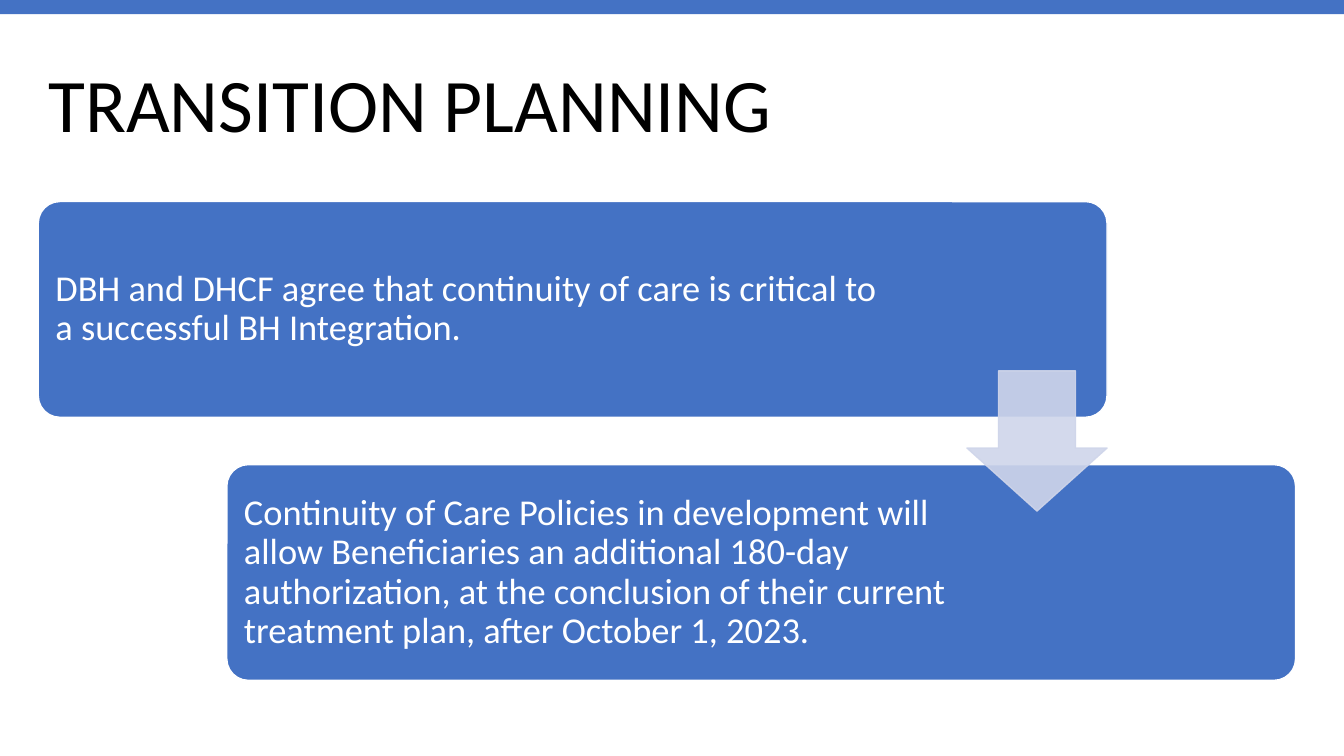
from dataclasses import dataclass

from lxml.etree import SubElement
from pptx import Presentation
from pptx.dml.color import RGBColor
from pptx.enum.shapes import MSO_SHAPE as Shape
from pptx.enum.text import MSO_ANCHOR as Anchor, PP_ALIGN as Align
from pptx.oxml.ns import qn
from pptx.util import Inches, Pt


@dataclass(frozen=True)
class Theme:
    font: str = "Calibri"
    title_size: int = 54
    body_size: int = 26
    blue: str = "4472C4"
    pale: str = "CFD5EA"
    white: str = "FFFFFF"
    black: str = "000000"


@dataclass(frozen=True)
class Box:
    left: float
    top: float
    width: float
    height: float

    @property
    def right(self):
        return self.left + self.width

    @property
    def bottom(self):
        return self.top + self.height

    def lengths(self):
        return [Inches(value) for value in (self.left, self.top, self.width, self.height)]


THEME = Theme()
SLIDE = Box(0, 0, 13.33, 7.5)
STEPS = [
    ("DBH and DHCF agree that continuity of care is critical to a successful BH Integration.", 8.39),
    ("Continuity of Care Policies in development will allow Beneficiaries an additional 180-day "
     "authorization, at the conclusion of their current treatment plan, after October 1, 2023.", 7.22),
]


def add_filled_shape(slide, kind, box, fill, line=None, adjustments=()):
    shape = slide.shapes.add_shape(kind, *box.lengths())
    shape.shadow.inherit = False
    for index, value in enumerate(adjustments):
        shape.adjustments[index] = value
    shape.fill.solid()
    shape.fill.fore_color.rgb = RGBColor.from_string(fill)
    if line:
        shape.line.color.rgb = RGBColor.from_string(line)
        shape.line.width = Pt(1)
    else:
        shape.line.fill.background()
    return shape


def add_text(slide, box, text, size, color, inset_x, inset_y):
    frame = slide.shapes.add_textbox(*box.lengths()).text_frame
    frame.word_wrap = True
    frame.vertical_anchor = Anchor.MIDDLE
    frame.margin_left = frame.margin_right = Inches(inset_x)
    frame.margin_top = frame.margin_bottom = Inches(inset_y)
    frame.text = text
    paragraph = frame.paragraphs[0]
    paragraph.alignment = Align.LEFT
    paragraph.line_spacing = 0.9
    font = paragraph.runs[0].font
    font.name = THEME.font
    font.size = Pt(size)
    font.color.rgb = RGBColor.from_string(color)


def add_header(slide, box):
    bar = Box(box.left, box.top, box.width, 0.14)
    add_filled_shape(slide, Shape.RECTANGLE, bar, THEME.blue)
    title = Box(box.left + 0.38, box.top + 0.35, 12.48, 1.45)
    add_text(slide, title, "TRANSITION PLANNING", THEME.title_size, THEME.black, 0.1, 0.05)


def add_step(slide, box, text, text_width):
    add_filled_shape(slide, Shape.ROUNDED_RECTANGLE, box, THEME.blue, THEME.white, [0.1])
    padding = 0.06
    text_box = Box(box.left + padding, box.top + padding, text_width, box.height - 2 * padding)
    add_text(slide, text_box, text, THEME.body_size, THEME.white, 0.11, 0.11)


def add_step_arrow(slide, upper, lower):
    side = 1.39
    middle = (upper.bottom + lower.top) / 2
    box = Box(upper.right - side, middle - side / 2, side, side)
    arrow = add_filled_shape(slide, Shape.DOWN_ARROW, box, THEME.pale, THEME.pale)
    arrow.adjustments[0] = 0.45
    arrow.adjustments[1] = 0.55
    arrow.adjustments[0], arrow.adjustments[1] = 0.55, 0.45
    for color in arrow.element.spPr.iter(qn("a:srgbClr")):
        SubElement(color, qn("a:alpha"), val="90000")


def add_process(slide, box):
    step_width, step_height = 10.6, 2.14
    gaps = len(STEPS) - 1
    shift_x = (box.width - step_width) / gaps
    shift_y = (box.height - step_height) / gaps
    step_boxes = [
        Box(box.left + index * shift_x, box.top + index * shift_y, step_width, step_height)
        for index in range(len(STEPS))
    ]
    for step_box, (text, text_width) in zip(step_boxes, STEPS):
        add_step(slide, step_box, text, text_width)
    for upper, lower in zip(step_boxes, step_boxes[1:]):
        add_step_arrow(slide, upper, lower)


def main():
    presentation = Presentation()
    presentation.slide_width = Inches(SLIDE.width)
    presentation.slide_height = Inches(SLIDE.height)
    slide = presentation.slides.add_slide(presentation.slide_layouts[6])
    add_header(slide, SLIDE)
    add_process(slide, Box(0.38, 2, 12.47, 4.75))
    presentation.save("out.pptx")


if __name__ == "__main__":
    main()
